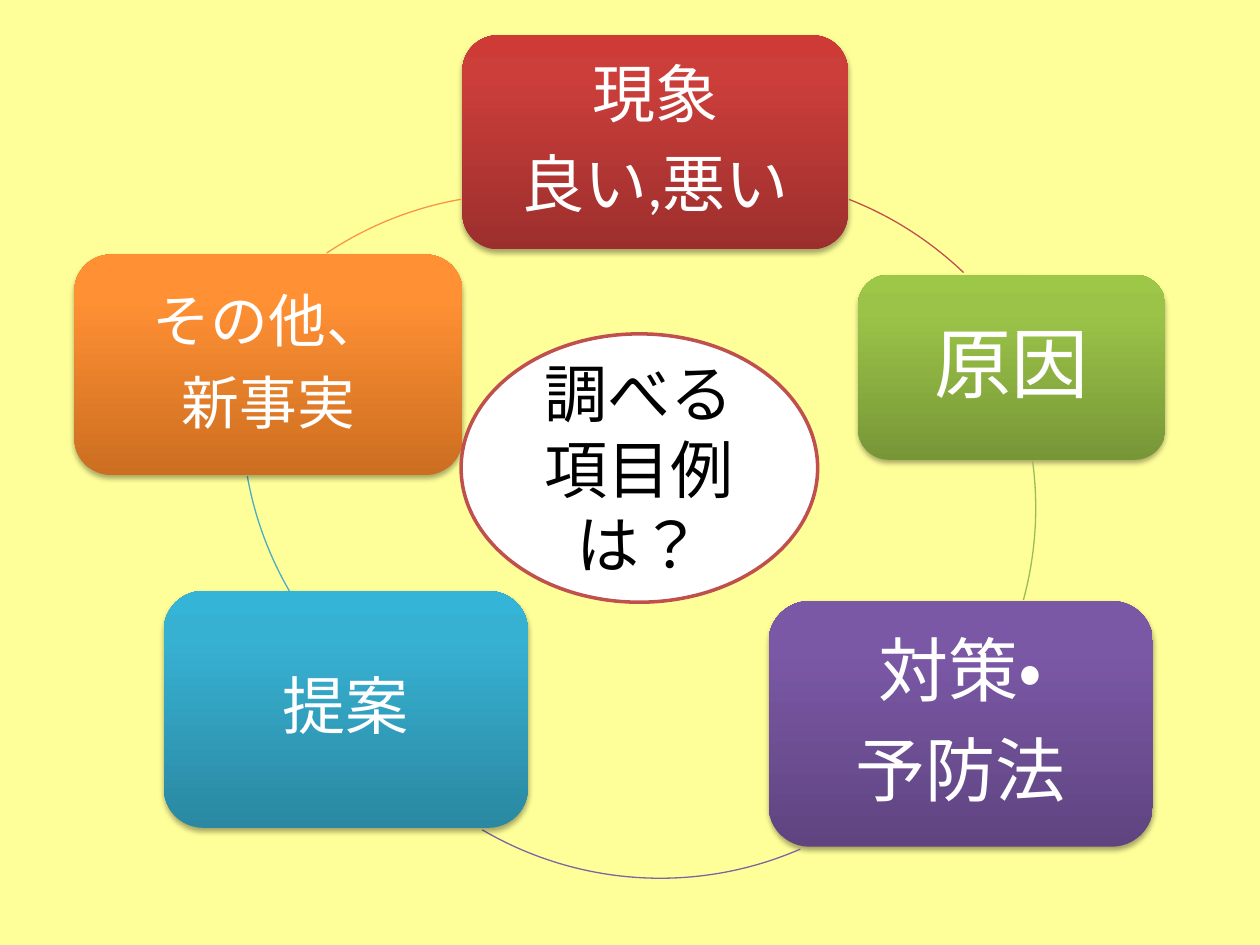
import copy
from dataclasses import dataclass

import pptx
import pptx.dml.color
import pptx.enum.lang
import pptx.enum.shapes
import pptx.enum.text
import pptx.oxml
import pptx.oxml.ns
import pptx.util
from pptx.util import Inches

SHAPE = pptx.enum.shapes.MSO_SHAPE


@dataclass(frozen=True)
class Theme:
    font: str = "Calibri"
    background: str = "FFFF99"
    light: str = "FFFFFF"
    dark: str = "000000"
    accent: str = "C0504D"
    center_size: int = 36
    arc_width: float = 0.75
    center_width: float = 2


@dataclass(frozen=True)
class Topic:
    lines: tuple
    size: int
    margin: float
    box: tuple         # left, top, width, height within the cycle
    gradient: tuple    # bottom, 80 %, top
    arc_corner: tuple  # left, top of the arc's circle within the cycle
    arc_angles: tuple  # start and end, clockwise from the right
    arc_color: str


THEME = Theme()
ARC_DIAMETER = 5.58
TOPICS = [
    Topic(("現象", "良い,悪い"), 36, 0.15, (3.17, 0.03, 3.06, 1.7),
          ("9C2F2D", "CB3E3A", "CE3B37"), (2.43, 1.14), (291.4, 313.7), "C0504D"),
    Topic(("原因",), 44, 0.18, (6.31, 1.93, 2.44, 1.47),
          ("779737", "9BC348", "9DC746"), (2.14, 0.99), (352.2, 15.2), "9BBB59"),
    Topic(("対策・", "予防法"), 40, 0.17, (5.6, 4.52, 3.05, 1.95),
          ("5F4480", "7B58A6", "7C57A8"), (1.95, 1.14), (66.5, 120.4), "8064A2"),
    Topic(("提案",), 36, 0.15, (0.8, 4.44, 2.89, 1.88),
          ("2A88A2", "37B1D2", "34B4D6"), (1.42, 0.25), (149.8, 169.9), "4BACC6"),
    Topic(("その他、", "新事実"), 33, 0.14, (0.09, 1.77, 3.08, 1.75),
          ("CC6E20", "FF9034", "FF9136"), (0.85, 1.29), (236.3, 260.1), "F79646"),
]


def rgb(value):
    return pptx.dml.color.RGBColor.from_string(value)


def add_shape(slide, kind, left, top, width, height):
    shape = slide.shapes.add_shape(
        kind, Inches(left), Inches(top), Inches(width), Inches(height))
    shape.shadow.inherit = False
    return shape


def set_line(shape, color, width):
    shape.line.color.rgb = rgb(color)
    shape.line.width = pptx.util.Pt(width)


def fill_gradient(shape, colors):
    """Fill from bottom to top with stops at 0, 80 and 100 percent."""
    shape.fill.gradient()
    shape.fill.gradient_angle = 90
    stop_list = shape._element.spPr.find(".//" + pptx.oxml.ns.qn("a:gsLst"))
    stop_list.insert(1, copy.deepcopy(stop_list[0]))
    for stop, position, color in zip(shape.fill.gradient_stops, (0, 0.8, 1), colors):
        stop.position = position
        stop.color.rgb = rgb(color)


def add_soft_shadow(shape):
    effects = shape._element.spPr.find(pptx.oxml.ns.qn("a:effectLst"))
    effects.append(pptx.oxml.parse_xml(
        f'<a:outerShdw {pptx.oxml.ns.nsdecls("a")} blurRad="40000" dist="23000" '
        'dir="5400000" rotWithShape="0"><a:srgbClr val="000000">'
        '<a:alpha val="35000"/></a:srgbClr></a:outerShdw>'))


def write_text(shape, lines, *, size, color, margin=None, spacing=None, after=None):
    """Write centred paragraphs; after is a percentage of the line."""
    frame = shape.text_frame
    frame.word_wrap = True
    frame.vertical_anchor = pptx.enum.text.MSO_ANCHOR.MIDDLE
    if margin is not None:
        frame.margin_left = frame.margin_right = Inches(margin)
        frame.margin_top = frame.margin_bottom = Inches(margin)
    for index, line in enumerate(lines):
        paragraph = frame.paragraphs[0] if index == 0 else frame.add_paragraph()
        paragraph.alignment = pptx.enum.text.PP_ALIGN.CENTER
        if spacing is not None:
            paragraph.line_spacing = spacing
        if after is not None:
            paragraph.space_after = pptx.util.Pt(0)
            gap = paragraph._p.pPr.find(pptx.oxml.ns.qn("a:spcAft"))
            gap.remove(gap[0])
            gap.append(pptx.oxml.parse_xml(
                f'<a:spcPct {pptx.oxml.ns.nsdecls("a")} val="{after * 1000}"/>'))
        run = paragraph.add_run()
        run.text = line
        run.font.name = THEME.font
        run.font.size = pptx.util.Pt(size)
        run.font.color.rgb = rgb(color)
        run.font.language_id = pptx.enum.lang.MSO_LANGUAGE_ID.JAPANESE


def add_topic(slide, topic, left, top, width, height):
    card = add_shape(slide, SHAPE.ROUNDED_RECTANGLE, left, top, width, height)
    fill_gradient(card, topic.gradient)
    card.line.fill.background()
    add_soft_shadow(card)
    write_text(card, topic.lines, size=topic.size, color=THEME.light,
               margin=topic.margin, spacing=0.9, after=35)


def add_arc(slide, topic, left, top, diameter):
    arc = add_shape(slide, SHAPE.ARC, left, top, diameter, diameter)
    for index, degrees in enumerate(topic.arc_angles):
        # Angles count 60000 to the degree, adjustments 100000 to the unit.
        arc.adjustments[index] = degrees * 0.6
    arc.fill.background()
    set_line(arc, topic.arc_color, THEME.arc_width)


def add_cycle(slide, left, top):
    for topic in TOPICS:
        x, y, width, height = topic.box
        add_topic(slide, topic, left + x, top + y, width, height)
        arc_x, arc_y = topic.arc_corner
        add_arc(slide, topic, left + arc_x, top + arc_y, ARC_DIAMETER)


def add_center_question(slide, left, top, width, height):
    question = add_shape(slide, SHAPE.OVAL, left, top, width, height)
    question.fill.solid()
    question.fill.fore_color.rgb = rgb(THEME.light)
    set_line(question, THEME.accent, THEME.center_width)
    write_text(question, ("調べる", "項目例は？"),
               size=THEME.center_size, color=THEME.dark)


def main():
    deck = pptx.Presentation()
    deck.slide_width, deck.slide_height = Inches(10), Inches(7.5)
    slide = deck.slides.add_slide(deck.slide_layouts[6])
    slide.background.fill.solid()
    slide.background.fill.fore_color.rgb = rgb(THEME.background)
    add_cycle(slide, 0.5, 0.25)
    add_center_question(slide, 3.66, 2.65, 2.83, 2.13)
    deck.save("out.pptx")


if __name__ == "__main__":
    main()
